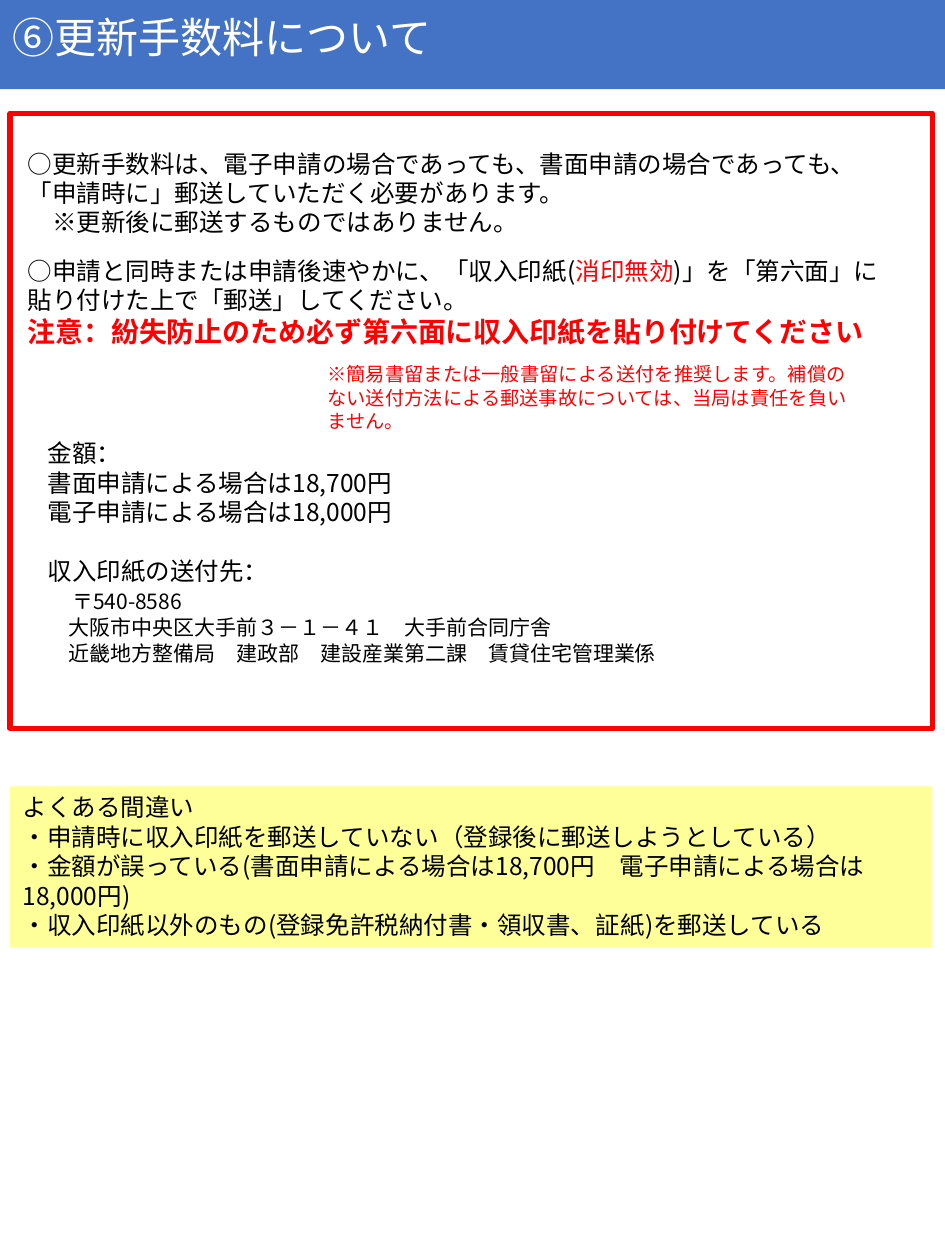
from lxml.etree import SubElement
from pptx import Presentation
from pptx.dml.color import RGBColor as Rgb
from pptx.enum.shapes import MSO_SHAPE as Shape
from pptx.enum.text import MSO_ANCHOR as Anchor, MSO_AUTO_SIZE as AutoSize, PP_ALIGN as Align
from pptx.oxml.ns import qn
from pptx.util import Inches, Pt

COLORS = {"ink": "000000", "white": "FFFFFF", "red": "FF0000", "blue": "4472C4", "yellow": "FFFF99"}
FONT = "Noto Sans CJK JP"
COLS, ROWS = 75, 100
LINE_RATIO = 1.2
BODY = {"size": 14, "color": "ink"}
ADDRESS = {"size": 12, "color": "ink"}
VOID = {"size": 14, "color": "red"}
WARNING = {"size": 16, "color": "red", "bold": True}
POSTAL_NOTE = {"size": 11, "color": "red"}
TITLE = {"size": 24, "color": "white"}


def color(key):
    """Return the named palette colour."""
    return Rgb.from_string(COLORS[key])


def set_values(target, values):
    """Set each attribute of the target from a dict."""
    for name, value in values.items():
        setattr(target, name, value)


def place(prs, col, row, cols, rows):
    """Turn grid columns and rows into left, top, width and height."""
    unit_x, unit_y = prs.slide_width / COLS, prs.slide_height / ROWS
    return [round(v) for v in (col * unit_x, row * unit_y, cols * unit_x, rows * unit_y)]


def add_run(paragraph, wording, style):
    """Append a run in the given style."""
    run = paragraph.add_run()
    run.text = wording
    set_values(run.font, {"name": FONT, "size": Pt(style["size"]), "bold": style.get("bold", False)})
    run.font.color.rgb = color(style["color"])
    SubElement(run.font._element, qn("a:ea")).set("typeface", FONT)


def write(frame, paragraphs, gaps=None, anchor=Anchor.TOP):
    """Fill a frame with paragraphs of (wording, style) runs; gaps are points before a paragraph."""
    set_values(frame, {"word_wrap": True, "auto_size": AutoSize.SHAPE_TO_FIT_TEXT, "vertical_anchor": anchor})
    for index, runs in enumerate(paragraphs):
        paragraph = frame.add_paragraph() if index else frame.paragraphs[0]
        tallest = max(style["size"] for _, style in runs)
        set_values(paragraph, {
            "alignment": Align.LEFT,
            "line_spacing": Pt(tallest * LINE_RATIO),
            "space_before": Pt((gaps or {}).get(index, 0)),
        })
        for wording, style in runs:
            add_run(paragraph, wording, style)


def add_title(slide, area, wording):
    """Turn the title placeholder into the blue heading band."""
    title = slide.shapes.title
    set_values(title, dict(zip(("left", "top", "width", "height"), area)))
    title.fill.solid()
    title.fill.fore_color.rgb = color("blue")
    write(title.text_frame, [[(wording, TITLE)]], anchor=Anchor.MIDDLE)


def add_panel(slide, area, fill=None, line=None):
    """Add a rectangle with an optional fill and outline."""
    panel = slide.shapes.add_shape(Shape.RECTANGLE, *area)
    panel.shadow.inherit = False
    if fill:
        panel.fill.solid()
        panel.fill.fore_color.rgb = color(fill)
    else:
        panel.fill.background()
    if line:
        panel.line.color.rgb = color(line)
        panel.line.width = Pt(3)
    else:
        panel.line.fill.background()
    return panel


def add_text(slide, area, paragraphs, gaps=None):
    """Add a wrapped text box."""
    write(slide.shapes.add_textbox(*area).text_frame, paragraphs, gaps)


def main():
    """Build the renewal fee slide."""
    prs = Presentation()
    set_values(prs, {"slide_width": Inches(7.5), "slide_height": Inches(10)})
    slide = prs.slides.add_slide(prs.slide_layouts[5])
    add_title(slide, place(prs, 0, 0.4, COLS, 5), "⑥更新手数料について")
    add_panel(slide, place(prs, 0.8, 9, 73.2, 48.8), line="red")

    add_text(slide, place(prs, 1.2, 11.3, 69.8, 8.1), [
        [("○更新手数料は、電子申請の場合であっても、書面申請の場合であっても、「申請時に」郵送していただく必要があります。", BODY)],
        [("　※更新後に郵送するものではありません。", BODY)],
    ])
    add_text(slide, place(prs, 1.2, 19.8, 69.8, 8.4), [
        [("○申請と同時または申請後速やかに、「収入印紙(", BODY), ("消印無効", VOID),
         (")」を「第六面」に貼り付けた上で「郵送」してください。", BODY)],
        [("注意：紛失防止のため必ず第六面に収入印紙を貼り付けてください", WARNING)],
    ])
    add_text(slide, place(prs, 25, 28.3, 44.6, 8.4), [
        [("※簡易書留または一般書留による送付を推奨します。補償のない送付方法による郵送事故については、当局は責任を負いません。", POSTAL_NOTE)],
    ])
    add_text(slide, place(prs, 2.8, 34.3, 69.3, 19.2), [
        [("金額：", BODY)],
        [("書面申請による場合は18,700円", BODY)],
        [("電子申請による場合は18,000円", BODY)],
        [("収入印紙の送付先：", BODY)],
        [("　", BODY), ("〒540-8586", ADDRESS)],
        [("　大阪市中央区大手前３－１－４１　大手前合同庁舎", ADDRESS)],
        [("　近畿地方整備局　建政部　建設産業第二課　賃貸住宅管理業係", ADDRESS)],
    ], gaps={3: BODY["size"] * LINE_RATIO})

    mistakes = add_panel(slide, place(prs, 0.8, 62.4, 73.2, 12.8), fill="yellow")
    write(mistakes.text_frame, [[(wording, BODY)] for wording in (
        "よくある間違い",
        "・申請時に収入印紙を郵送していない（登録後に郵送しようとしている）",
        "・金額が誤っている(書面申請による場合は18,700円　電子申請による場合は18,000円)",
        "・収入印紙以外のもの(登録免許税納付書・領収書、証紙)を郵送している",
    )])
    prs.save("out.pptx")


if __name__ == "__main__":
    main()
